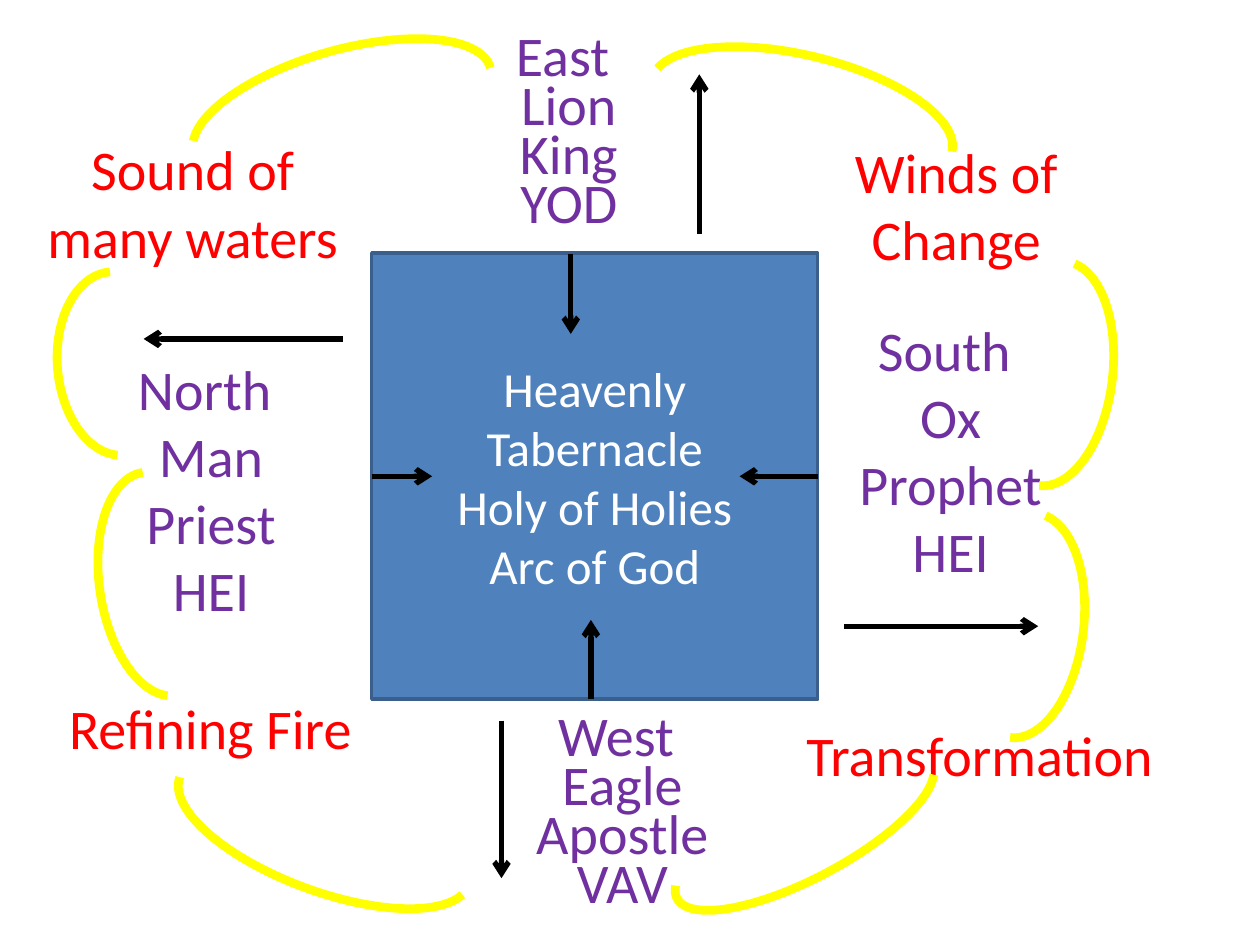
from lxml import etree
from pptx import Presentation
from pptx import util as u
from pptx.dml.color import RGBColor
from pptx.enum import shapes, text
from pptx.oxml.ns import qn

PURPLE, RED, YELLOW, BLACK = "7030A0", "FF0000", "FFFF00", "000000"


def color(value):
    return RGBColor.from_string(value)


def write(box, words, size, hue, spacing=None):
    """Fill a shape with centred paragraphs in one font."""
    frame = box.text_frame
    frame.word_wrap = True
    frame.text = words
    for para in frame.paragraphs:
        para.alignment = text.PP_ALIGN.CENTER
        para.line_spacing = spacing
        para.font.name = "Calibri"
        para.font.size = u.Pt(size)
        para.font.color.rgb = color(hue)
    return frame


deck = Presentation()
deck.slide_width, deck.slide_height = u.Inches(10), u.Inches(7.5)
page = deck.slides.add_slide(deck.slide_layouts[6])

# Central square
square = page.shapes.add_shape(
    shapes.MSO_SHAPE.RECTANGLE,
    u.Inches(2.95), u.Inches(2.01), u.Inches(3.54), u.Inches(3.54))
square.shadow.inherit = False
square.fill.solid()
square.fill.fore_color.rgb = color("4F81BD")
square.line.color.rgb = color("3A5F8C")
square.line.width = u.Pt(2)
frame = write(square, "Heavenly\vTabernacle\nHoly of Holies\nArc of God", 28, "FFFFFF")
frame.vertical_anchor = text.MSO_ANCHOR.MIDDLE

# Directions (purple) and signs (red): words, colour, line spacing, frame
tight = u.Pt(28)
labels = [
    ("North \nMan\nPriest\nHEI", PURPLE, None, (0.77, 2.81, 1.81, 2.12)),
    ("South \nOx\nProphet\nHEI", PURPLE, None, (6.74, 2.5, 1.61, 2.19)),
    ("East \nLion\nKing\nYOD", PURPLE, tight, (3.9, 0.31, 1.23, 1.56)),
    ("West \nEagle\nApostle\nVAV", PURPLE, tight, (4.17, 5.7, 1.54, 1.51)),
    ("Transformation", RED, None, (6.37, 5.72, 2.81, 0.47)),
    ("Refining Fire", RED, None, (0.51, 5.5, 2.32, 0.69)),
    ("Winds of Change", RED, None, (6.59, 1.09, 2, 1.15)),
    ("Sound of many waters", RED, None, (0.35, 1.07, 2.36, 1.58)),
]
for words, hue, spacing, place in labels:
    box = page.shapes.add_textbox(*map(u.Inches, place))
    frame = write(box, words, 32, hue, spacing)
    frame.margin_left = frame.margin_right = 0
    frame.margin_top = frame.margin_bottom = 0

# Arrows: start, end, and the side of the square they are joined to
arrows = [
    (5.55, 1.86, 5.55, 0.59, None),
    (3.98, 5.72, 3.98, 6.97, None),
    (6.7, 4.97, 8.24, 4.97, None),
    (2.72, 2.69, 1.14, 2.69, None),
    (4.53, 2.02, 4.53, 2.65, None),
    (2.95, 3.78, 3.43, 3.78, 1),
    (6.49, 3.78, 5.87, 3.78, 3),
    (4.69, 5.55, 4.69, 4.92, None),
]
for *ends, side in arrows:
    arrow = page.shapes.add_connector(
        shapes.MSO_CONNECTOR.STRAIGHT, *map(u.Inches, ends))
    if side is not None:
        arrow.begin_connect(square, side)
    arrow.line.color.rgb = color(BLACK)
    arrow.line.width = u.Pt(3)
    head = etree.SubElement(arrow.line._get_or_add_ln(), qn("a:tailEnd"))
    head.set("type", "arrow")
    etree.SubElement(arrow._element.spPr, qn("a:effectLst"))

# Ring of yellow arcs: frame, rotation, end angle
arcs = [
    ((1.49, 0.4, 2.45, 0.95), 344, 0),
    ((5.14, 0.44, 2.45, 0.95), 13.6, 0),
    ((7.23, 4.49, 1.79, 0.95), 96.9, 0),
    ((5.24, 6.22, 2.29, 0.75), 152.1, 2.96),
    ((0.2, 2.41, 1.46, 0.95), 265.5, 0),
    ((1.35, 6.12, 2.45, 0.95), 200.4, 0),
    ((7.46, 2.49, 1.79, 0.95), 96.9, 0),
    ((0.37, 4.16, 1.79, 0.95), 261.5, 0),
]
for place, rotation, end in arcs:
    arc = page.shapes.add_shape(shapes.MSO_SHAPE.ARC, *map(u.Inches, place))
    arc.adjustments[0] = 110.61
    arc.adjustments[1] = end
    arc.rotation = rotation
    arc.shadow.inherit = False
    arc.fill.background()
    arc.line.color.rgb = color(YELLOW)
    arc.line.width = u.Pt(5)

deck.save("out.pptx")
